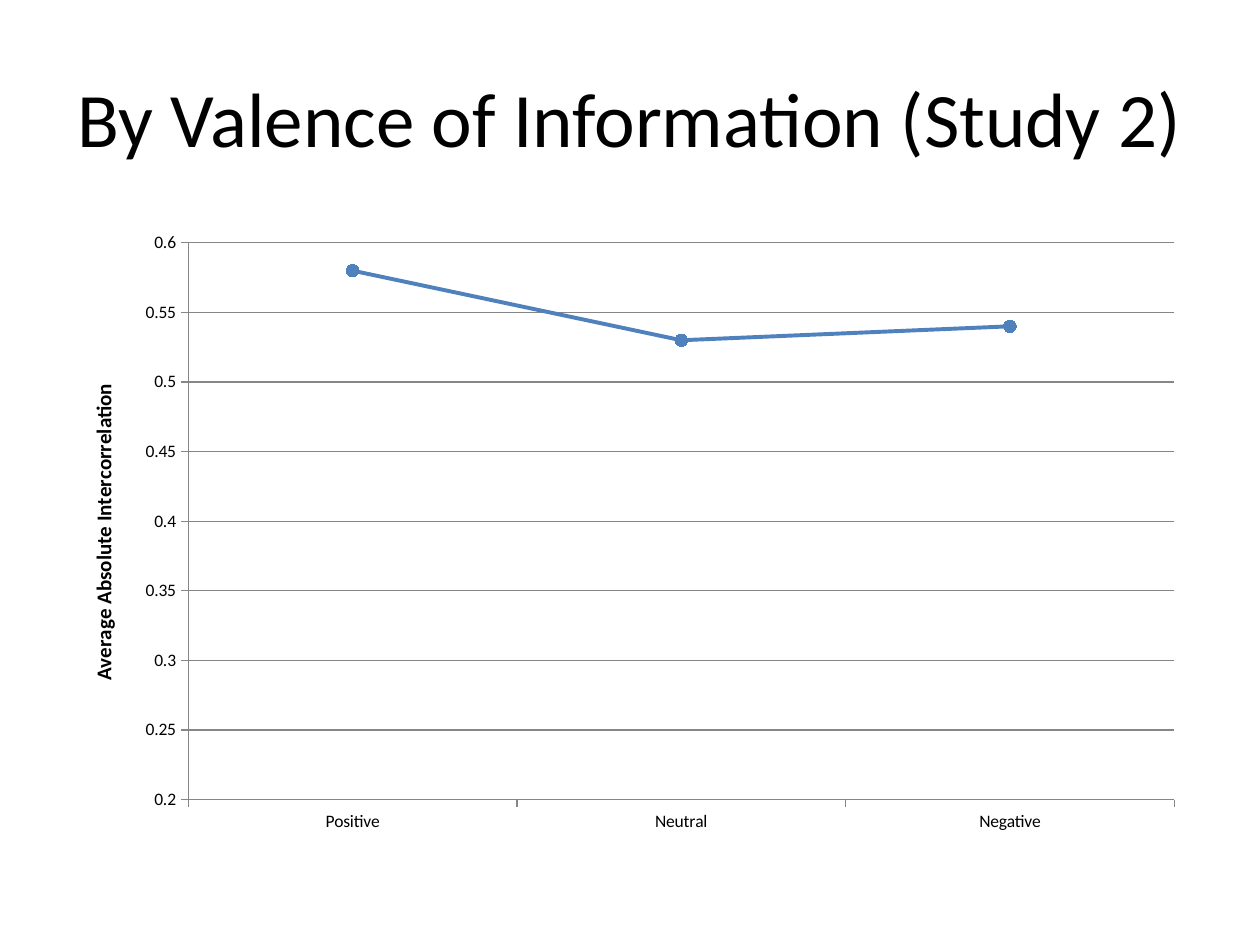
from dataclasses import dataclass

from pptx import Presentation
from pptx.chart.data import CategoryChartData
from pptx.dml.color import RGBColor
from pptx.enum.chart import XL_CHART_TYPE as ChartType, XL_MARKER_STYLE as Marker, XL_TICK_MARK as Tick
from pptx.enum.text import MSO_ANCHOR as Anchor, PP_ALIGN as Align
from pptx.util import Pt

HEADING = "By Valence of Information (Study 2)"
AXIS_TITLE = "Average Absolute Intercorrelation"
SERIES = "Series 1"
INTERCORRELATIONS = {"Positive": 0.58, "Neutral": 0.53, "Negative": 0.54}
SCALE = (0.2, 0.6, 0.05)


@dataclass(frozen=True)
class Theme:
    font: str = "Calibri"
    text: RGBColor = RGBColor(0, 0, 0)
    rule: RGBColor = RGBColor(0x86, 0x86, 0x86)
    accent: RGBColor = RGBColor(0x4F, 0x81, 0xBD)
    heading_size: int = 44
    axis_title_size: int = 12
    label_size: int = 10


THEME = Theme()
WIDTH, HEIGHT, MARGIN = 720, 540, 36
CONTENT_WIDTH = WIDTH - 2 * MARGIN
HEADING_TOP, HEADING_HEIGHT = 21.6, 90
CHART_TOP, CHART_HEIGHT = 126, 356.4


def style_font(font, size, bold=False):
    font.name = THEME.font
    font.size = Pt(size)
    font.bold = bold
    font.color.rgb = THEME.text


def write_text(frame, text, size, bold=False, align=None):
    paragraph = frame.paragraphs[0]
    paragraph.alignment = align
    run = paragraph.add_run()
    run.text = text
    style_font(run.font, size, bold)


def style_line(line, color, width):
    line.color.rgb = color
    line.width = Pt(width)


def add_heading(slide):
    heading = slide.shapes.add_textbox(
        Pt(MARGIN), Pt(HEADING_TOP), Pt(CONTENT_WIDTH), Pt(HEADING_HEIGHT))
    frame = heading.text_frame
    frame.word_wrap = True
    frame.vertical_anchor = Anchor.MIDDLE
    write_text(frame, HEADING, THEME.heading_size, align=Align.CENTER)


def add_valence_chart(slide):
    data = CategoryChartData()
    data.categories = list(INTERCORRELATIONS)
    data.add_series(SERIES, list(INTERCORRELATIONS.values()))
    chart = slide.shapes.add_chart(
        ChartType.LINE_MARKERS, Pt(MARGIN), Pt(CHART_TOP),
        Pt(CONTENT_WIDTH), Pt(CHART_HEIGHT), data).chart
    chart.has_legend = False
    chart.has_title = False
    style_font(chart.font, THEME.label_size)

    valence, correlation = chart.category_axis, chart.value_axis
    for axis in (valence, correlation):
        axis.major_tick_mark = Tick.OUTSIDE
        axis.minor_tick_mark = Tick.NONE
        style_line(axis.format.line, THEME.rule, 0.75)
    valence.has_major_gridlines = False
    correlation.has_major_gridlines = True
    style_line(correlation.major_gridlines.format.line, THEME.rule, 0.75)
    correlation.minimum_scale, correlation.maximum_scale, correlation.major_unit = SCALE
    correlation.tick_labels.number_format = "General"
    correlation.tick_labels.number_format_is_linked = False
    write_text(correlation.axis_title.text_frame, AXIS_TITLE, THEME.axis_title_size, bold=True)

    plot = chart.plots[0]
    plot.vary_by_categories = False
    trend = plot.series[0]
    trend.smooth = False
    style_line(trend.format.line, THEME.accent, 2.25)
    trend.marker.style = Marker.CIRCLE
    trend.marker.size = 7
    trend.marker.format.fill.solid()
    trend.marker.format.fill.fore_color.rgb = THEME.accent
    trend.marker.format.line.fill.background()


def main():
    deck = Presentation()
    deck.slide_width, deck.slide_height = Pt(WIDTH), Pt(HEIGHT)
    slide = deck.slides.add_slide(deck.slide_layouts[6])
    add_heading(slide)
    add_valence_chart(slide)
    deck.save("out.pptx")


if __name__ == "__main__":
    main()
